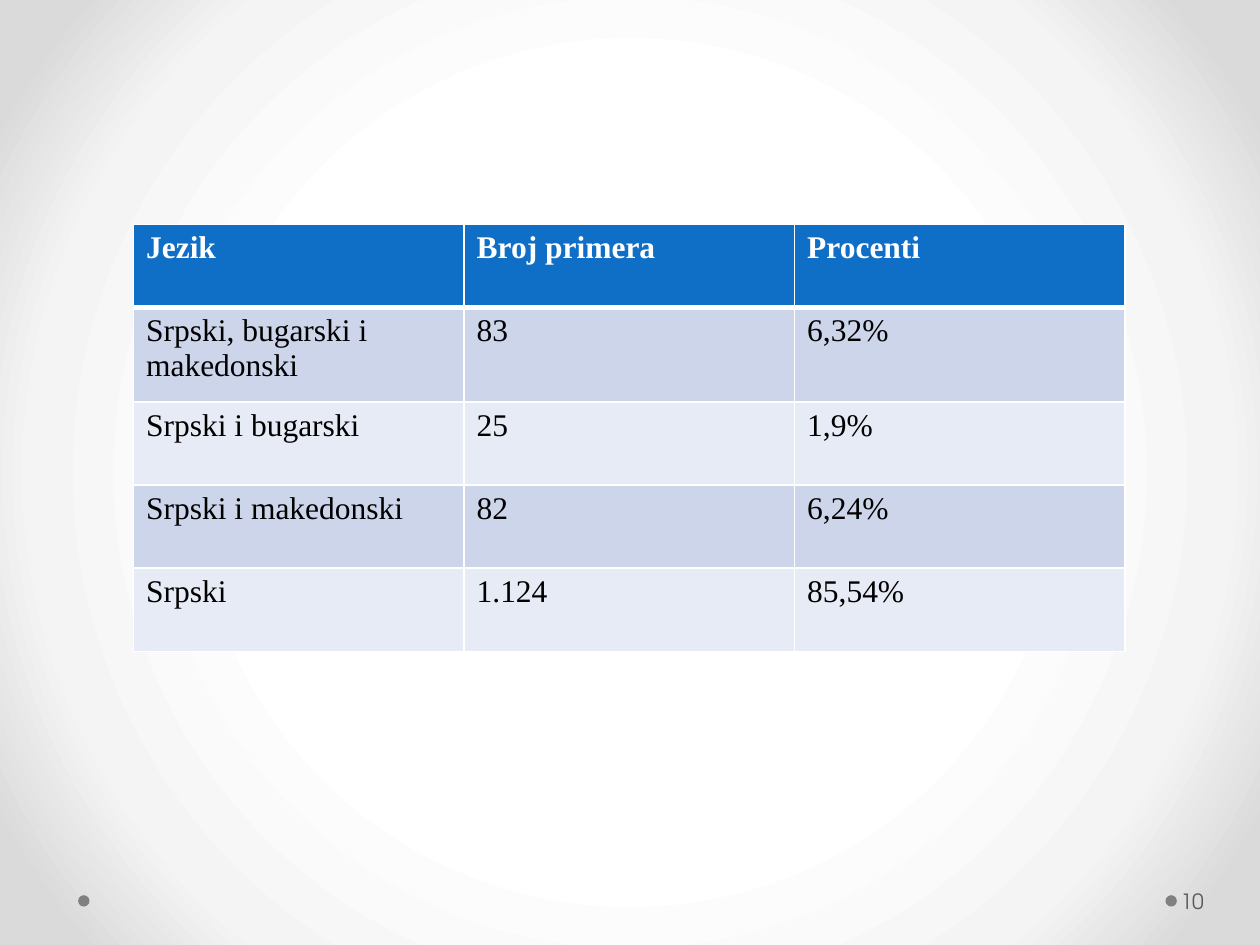
from lxml import etree
from pptx import Presentation
from pptx.dml.color import RGBColor
from pptx.enum.shapes import MSO_SHAPE as Shape
from pptx.enum.text import MSO_ANCHOR as Anchor
from pptx.oxml import parse_xml
from pptx.oxml.ns import nsdecls, qn
from pptx.util import Inches, Pt

ROWS = [
    ("Jezik", "Broj primera", "Procenti"),
    ("Srpski, bugarski i makedonski", "83", "6,32%"),
    ("Srpski i bugarski", "25", "1,9%"),
    ("Srpski i makedonski", "82", "6,24%"),
    ("Srpski", "1.124", "85,54%"),
]
ROW_HEIGHTS = [0.66, 0.75, 0.66, 0.66, 0.66]
BACKGROUND_STOPS = [(50, "FFFFFF"), (76, "F4F4F4"), (92, "DADADA")]
HEADER_FORMAT = {"size": Pt(18), "name": "Times New Roman", "bold": True}
BODY_FORMAT = {**HEADER_FORMAT, "bold": False}
NUMBER_FORMAT = {"size": Pt(12), "name": "TeX Gyre Adventor"}


def paint(color, value):
    color.rgb = RGBColor.from_string(value)


def fill_solid(target, value):
    target.fill.solid()
    paint(target.fill.fore_color, value)


def write(frame, text, formats, color):
    span = frame.paragraphs[0].add_run()
    span.text = text
    for name, value in formats.items():
        setattr(span.font, name, value)
    paint(span.font.color, color)


def set_background(page):
    stops = "".join(
        f'<a:gs pos="{position * 1000}"><a:srgbClr val="{color}"/></a:gs>'
        for position, color in BACKGROUND_STOPS
    )
    background = parse_xml(
        f'<p:bg {nsdecls("p", "a")}><p:bgPr><a:gradFill rotWithShape="1">'
        f'<a:gsLst>{stops}</a:gsLst><a:path path="circle">'
        '<a:fillToRect l="50000" t="50000" r="50000" b="50000"/></a:path>'
        "</a:gradFill><a:effectLst/></p:bgPr></p:bg>"
    )
    page.element.cSld.insert(0, background)


def set_borders(cell, widths, color):
    properties = cell._tc.get_or_add_tcPr()
    for index, (side, width) in enumerate(widths.items()):
        line = etree.Element(qn(f"a:ln{side}"), w=str(Pt(width)))
        solid = etree.SubElement(line, qn("a:solidFill"))
        etree.SubElement(solid, qn("a:srgbClr"), val=color)
        properties.insert(index, line)


def add_language_table(page, left, top, width):
    columns = len(ROWS[0])
    table = page.shapes.add_table(
        len(ROWS), columns, Inches(left), Inches(top),
        Inches(width), Inches(sum(ROW_HEIGHTS)),
    ).table
    for column in table.columns:
        column.width = Inches(width / columns)
    for row_index, (texts, height) in enumerate(zip(ROWS, ROW_HEIGHTS)):
        header = row_index == 0
        table.rows[row_index].height = Inches(height)
        band = "0F6FC6" if header else ("E7EBF5", "CCD5EA")[row_index % 2]
        widths = {"L": 1, "R": 1, "T": 3 if row_index == 1 else 1,
                  "B": 3 if header else 1}
        for column_index, text in enumerate(texts):
            cell = table.cell(row_index, column_index)
            fill_solid(cell, band)
            set_borders(cell, widths, "FFFFFF")
            write(cell.text_frame, text,
                  HEADER_FORMAT if header else BODY_FORMAT,
                  "FFFFFF" if header else "000000")


def add_footer(page, top, height):
    size = 0.09
    for left in (9.25, 0.62):
        dot = page.shapes.add_shape(
            Shape.OVAL, Inches(left), Inches(top + (height - size) / 2),
            Inches(size), Inches(size),
        )
        dot.shadow.inherit = False
        fill_solid(dot, "808080")
        dot.line.fill.background()
    box = page.shapes.add_textbox(
        Inches(9.34), Inches(top), Inches(0.61), Inches(height))
    frame = box.text_frame
    settings = {
        "word_wrap": True, "vertical_anchor": Anchor.MIDDLE,
        "margin_left": Inches(0.03), "margin_right": Inches(0.05),
        "margin_top": Inches(0.05), "margin_bottom": Inches(0.05),
    }
    for name, value in settings.items():
        setattr(frame, name, value)
    write(frame, "10", NUMBER_FORMAT, "595959")


def main():
    deck = Presentation()
    deck.slide_width, deck.slide_height = Inches(10), Inches(7.5)
    page = deck.slides.add_slide(deck.slide_layouts[6])
    set_background(page)
    add_footer(page, 6.95, 0.4)
    add_language_table(page, 1.06, 1.78, 7.87)
    deck.save("out.pptx")


if __name__ == "__main__":
    main()
